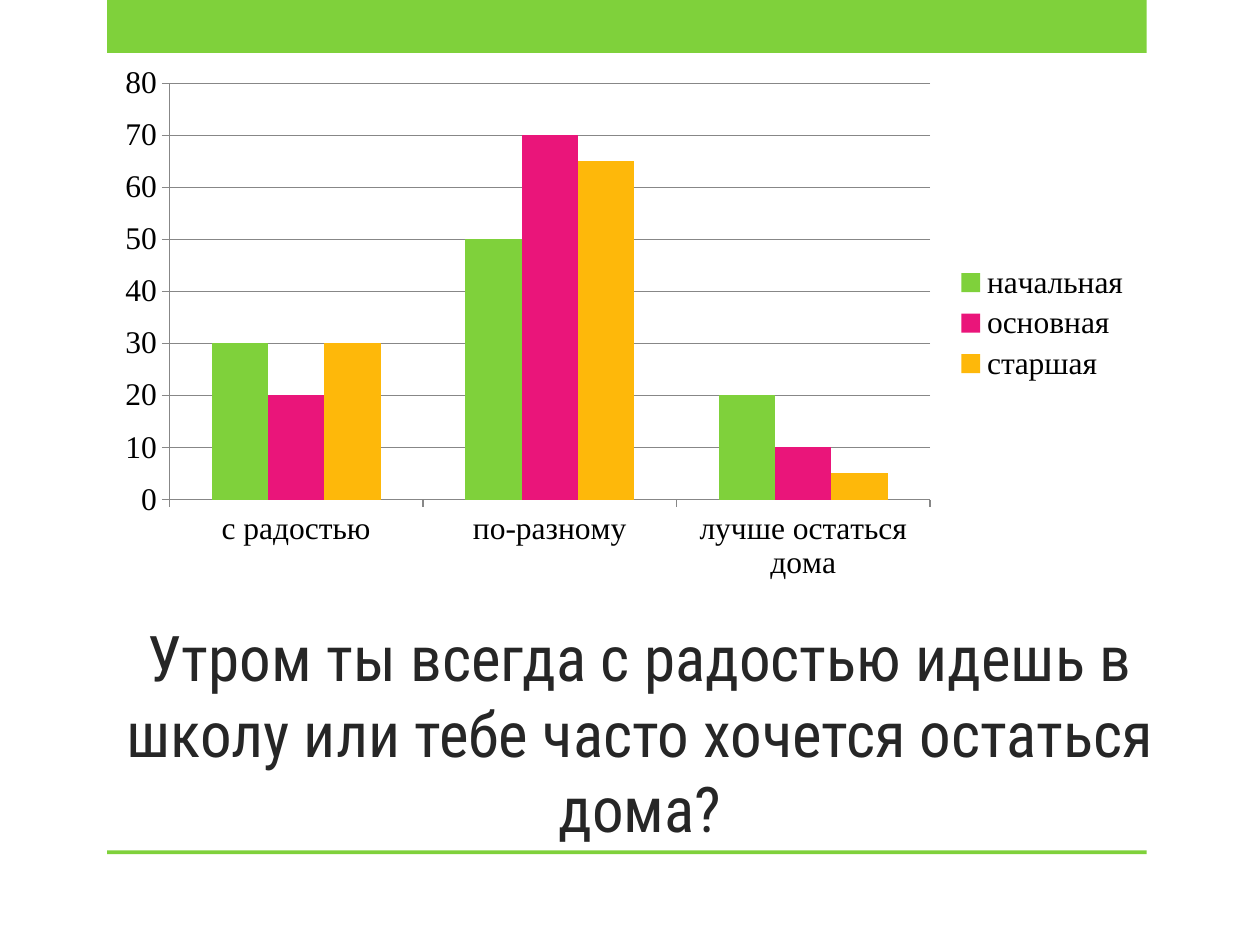
from pptx import Presentation
from pptx.chart.data import CategoryChartData
from pptx.dml.color import RGBColor
from pptx.enum.chart import XL_CHART_TYPE as ChartType, XL_LEGEND_POSITION as LegendPosition, XL_TICK_MARK as TickMark
from pptx.enum.shapes import MSO_SHAPE as Shape
from pptx.enum.text import MSO_ANCHOR as Anchor, PP_ALIGN as Align
from pptx.util import Inches, Pt

GREEN = RGBColor(0x7F, 0xD1, 0x3B)
PINK = RGBColor(0xEA, 0x15, 0x7A)
AMBER = RGBColor(0xFE, 0xB8, 0x0A)
DARK = RGBColor(0x26, 0x26, 0x26)
GRAY = RGBColor(0x87, 0x87, 0x87)
BLACK = RGBColor(0, 0, 0)

QUESTION = "Утром ты всегда с радостью идешь в школу или тебе часто хочется остаться дома?"
ANSWERS = ["с радостью", "по-разному", "лучше остаться дома"]
SCHOOL_LEVELS = [
    ("начальная", [30, 50, 20], GREEN),
    ("основная", [20, 70, 10], PINK),
    ("старшая", [30, 65, 5], AMBER),
]
BANDS = [(0, 0.42), (6.75, 0.03)]


def set_font(font, name, size, color):
    font.name = name
    font.size = Pt(size)
    font.color.rgb = color


def add_text(slide, box, text, *, font, size, color, align, anchor):
    frame = slide.shapes.add_textbox(*map(Inches, box)).text_frame
    frame.word_wrap = True
    frame.vertical_anchor = anchor
    paragraph = frame.paragraphs[0]
    paragraph.alignment = align
    run = paragraph.add_run()
    run.text = text
    set_font(run.font, font, size, color)


def add_band(slide, top, height):
    band = slide.shapes.add_shape(
        Shape.RECTANGLE, Inches(0.85), Inches(top), Inches(8.25), Inches(height))
    band.shadow.inherit = False
    band.fill.solid()
    band.fill.fore_color.rgb = GREEN
    band.line.fill.background()


def style_line(line):
    line.color.rgb = GRAY
    line.width = Pt(0.75)


def add_answers_chart(slide, box):
    data = CategoryChartData()
    data.categories = ANSWERS
    for level, values, _ in SCHOOL_LEVELS:
        data.add_series(level, values)
    chart = slide.shapes.add_chart(
        ChartType.COLUMN_CLUSTERED, *map(Inches, box), data).chart
    set_font(chart.font, "Times New Roman", 18, BLACK)
    chart.has_title = False
    chart.has_legend = True
    chart.legend.position = LegendPosition.RIGHT
    chart.legend.include_in_layout = False

    columns = chart.plots[0]
    columns.gap_width = 150
    columns.overlap = 0
    columns.vary_by_categories = False
    for series, (_, _, color) in zip(columns.series, SCHOOL_LEVELS):
        series.format.fill.solid()
        series.format.fill.fore_color.rgb = color

    for axis in (chart.category_axis, chart.value_axis):
        axis.major_tick_mark = TickMark.OUTSIDE
        axis.minor_tick_mark = TickMark.NONE
        style_line(axis.format.line)
    scale = chart.value_axis
    scale.minimum_scale, scale.maximum_scale, scale.major_unit = 0, 80, 10
    scale.has_major_gridlines = True
    style_line(scale.major_gridlines.format.line)


def main():
    deck = Presentation()
    deck.slide_width, deck.slide_height = Inches(10), Inches(7.5)
    slide = deck.slides.add_slide(deck.slide_layouts[6])
    for top, height in BANDS:
        add_band(slide, top, height)
    add_text(slide, (0.83, 5.01, 8.5, 1.75), QUESTION, font="Roboto Condensed",
             size=36, color=DARK, align=Align.CENTER, anchor=Anchor.BOTTOM)
    add_answers_chart(slide, (0.83, 0.44, 8.25, 4.25))
    deck.save("out.pptx")


if __name__ == "__main__":
    main()
